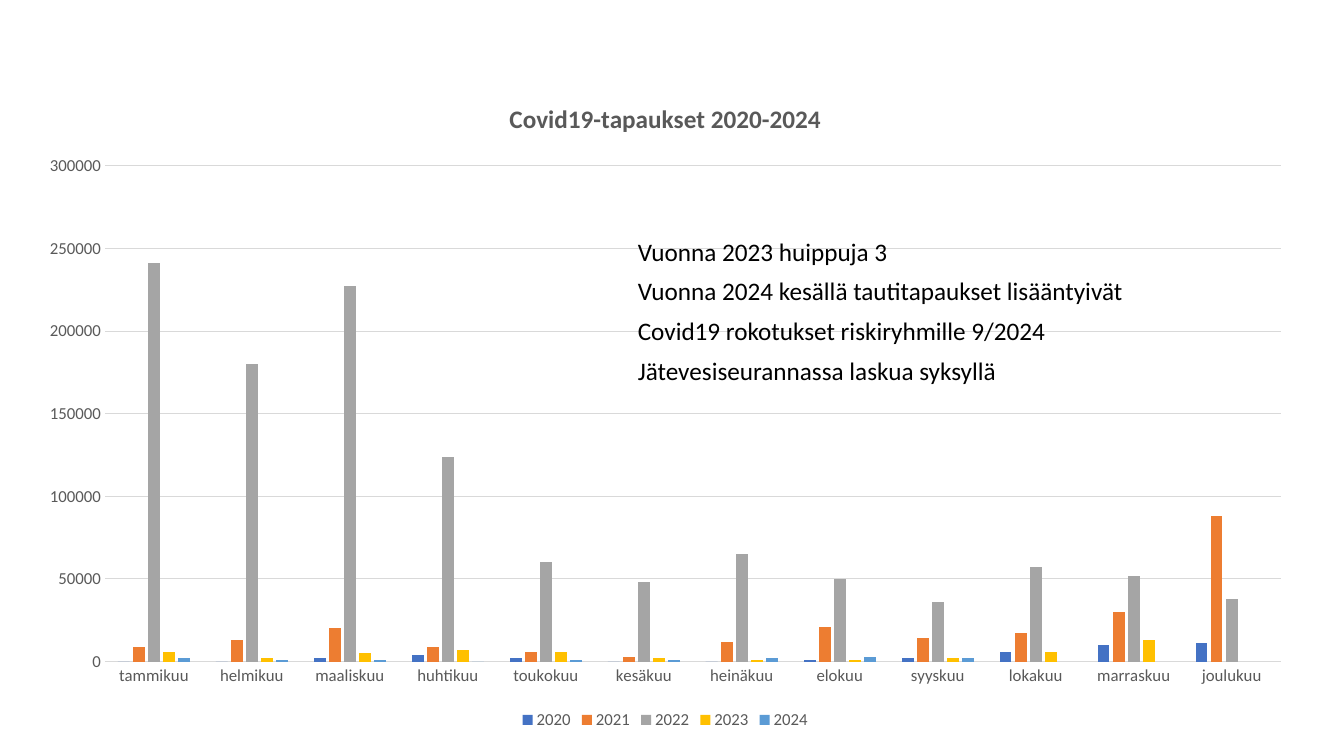
from lxml.etree import SubElement
from pptx import Presentation
from pptx.chart.data import CategoryChartData
from pptx.dml.color import RGBColor
from pptx.enum.chart import XL_CHART_TYPE, XL_LEGEND_POSITION, XL_TICK_MARK
from pptx.enum.text import MSO_AUTO_SIZE
from pptx.oxml.ns import qn
from pptx.util import Pt

MONTHS = ["tammikuu", "helmikuu", "maaliskuu", "huhtikuu", "toukokuu", "kesäkuu",
          "heinäkuu", "elokuu", "syyskuu", "lokakuu", "marraskuu", "joulukuu"]
CASES = {  # thousands per month
    "2020": ("4472C4", [0, 0, 2, 4, 2, 0, 0, 1, 2, 6, 10, 11]),
    "2021": ("ED7D31", [9, 13, 20, 9, 6, 3, 12, 21, 14, 17, 30, 88]),
    "2022": ("A5A5A5", [241, 180, 227, 124, 60, 48, 65, 50, 36, 57, 52, 38]),
    "2023": ("FFC000", [6, 2, 5, 7, 6, 2, 1, 1, 2, 6, 13, None]),
    "2024": ("5B9BD5", [2, 1, 1, 0, 1, 1, 2, 3, 2, None, None, None]),
}
NOTES = [("Vuonna 2023 huippuja 3", 201),
         ("Vuonna 2024 kesällä tautitapaukset lisääntyivät", 364),
         ("Covid19 rokotukset riskiryhmille 9/2024", 314),
         ("Jätevesiseurannassa laskua syksyllä", 284)]


def color(code):
    return RGBColor.from_string(code)


def apply(target, values):
    """Set each named attribute of target."""
    for name, value in values.items():
        setattr(target, name, value)


class Page:
    face = "Calibri"
    ink, gray, rule = "000000", "595959", "D9D9D9"

    def __init__(self, slide):
        self.slide = slide

    def font(self, font, size, code, bold=False):
        apply(font, {"name": self.face, "size": Pt(size), "bold": bold})
        font.color.rgb = color(code)

    def line(self, form):
        form.line.width = Pt(0.75)
        form.line.color.rgb = color(self.rule)

    def text(self, words, left, top, width, height):
        box = self.slide.shapes.add_textbox(Pt(left), Pt(top), Pt(width), Pt(height))
        frame = box.text_frame
        apply(frame, {"text": words, "word_wrap": True,
                      "auto_size": MSO_AUTO_SIZE.SHAPE_TO_FIT_TEXT})
        self.font(frame.paragraphs[0].runs[0].font, 18, self.ink)

    def chart(self, title, left, top, width, height):
        data = CategoryChartData(number_format="General")
        data.categories = MONTHS
        for year, (_, counts) in CASES.items():
            data.add_series(year, [None if n is None else n * 1000 for n in counts])
        chart = self.slide.shapes.add_chart(
            XL_CHART_TYPE.COLUMN_CLUSTERED, Pt(left), Pt(top), Pt(width), Pt(height), data).chart
        self.font(chart.font, 10, self.ink)
        apply(chart, {"has_title": True, "has_legend": True})
        head = chart.chart_title.text_frame
        head.text = title
        self.font(head.paragraphs[0].runs[0].font, 18, self.gray, True)
        apply(chart.legend, {"position": XL_LEGEND_POSITION.BOTTOM, "include_in_layout": False})
        self.font(chart.legend.font, 12, self.gray)
        self.axes(chart)
        plot = chart.plots[0]
        apply(plot, {"gap_width": 219, "overlap": -27, "vary_by_categories": False})
        for series, (code, _) in zip(plot.series, CASES.values()):
            series.invert_if_negative = False
            series.format.fill.solid()
            series.format.fill.fore_color.rgb = color(code)

    def axes(self, chart):
        for axis in (chart.category_axis, chart.value_axis):
            apply(axis, {"major_tick_mark": XL_TICK_MARK.NONE,
                         "minor_tick_mark": XL_TICK_MARK.NONE})
            self.font(axis.tick_labels.font, 12, self.gray)
        self.line(chart.category_axis.format)
        scale = chart.value_axis
        apply(scale, {"minimum_scale": 0, "maximum_scale": 300000, "major_unit": 50000,
                      "has_major_gridlines": True})
        scale.format.line.fill.background()
        self.line(scale.major_gridlines.format)


def main():
    deck = Presentation()
    apply(deck, {"slide_width": Pt(960), "slide_height": Pt(540)})
    page = Page(deck.slides.add_slide(deck.slide_layouts[6]))
    page.chart("Covid19-tapaukset 2020-2024", 17.3, 56.2, 915.8, 468)
    for row, (words, width) in enumerate(NOTES):
        page.text(words, 448.5, 165 + row * 28.4, width, 29)
    deck.save("out.pptx")


if __name__ == "__main__":
    main()
